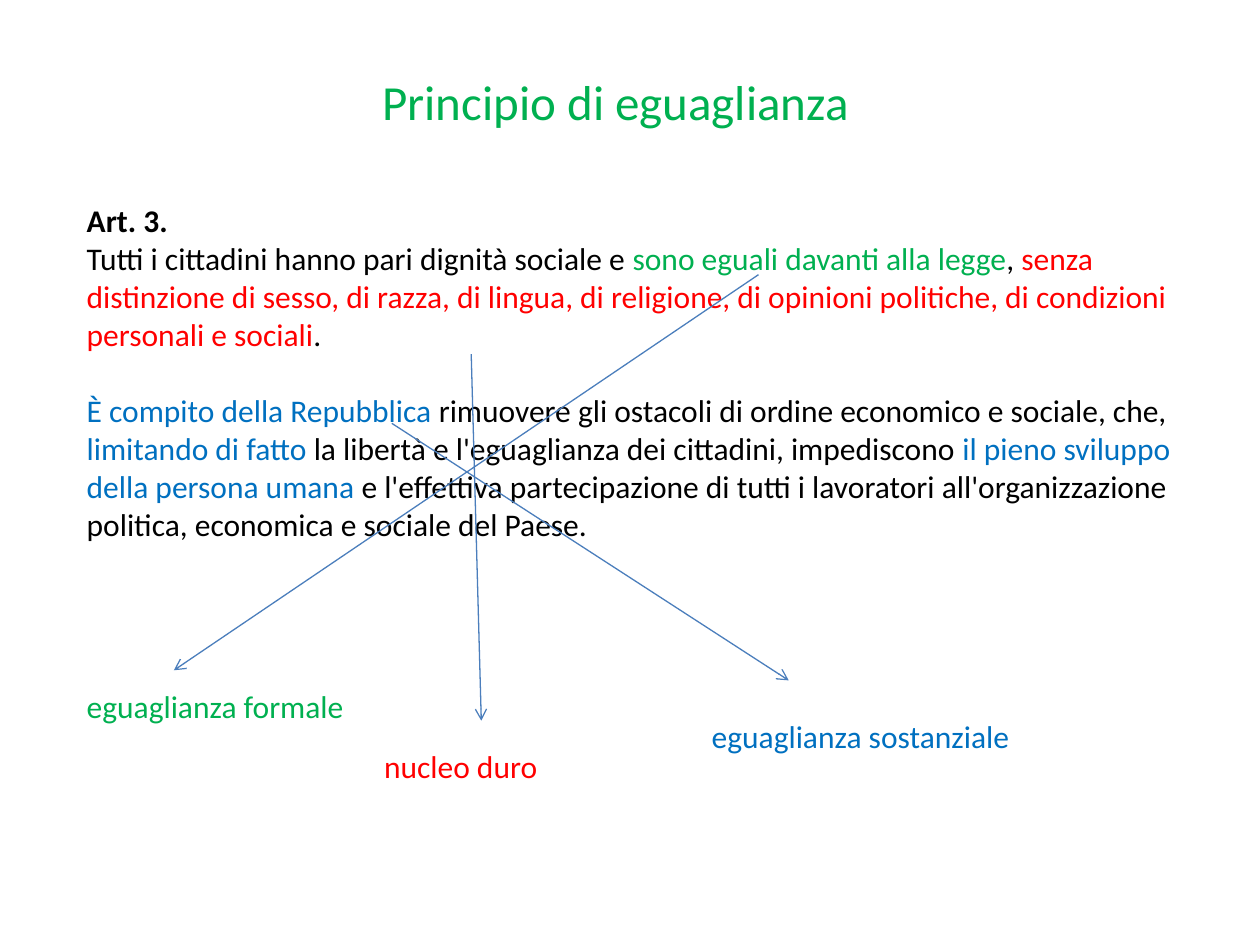
from dataclasses import dataclass

from lxml.etree import SubElement
from pptx import Presentation
from pptx.dml.color import RGBColor
from pptx.enum.shapes import MSO_CONNECTOR as Connector
from pptx.enum.text import MSO_AUTO_SIZE as AutoSize, PP_ALIGN as Align
from pptx.oxml.ns import qn
from pptx.util import Inches, Pt


@dataclass(frozen=True)
class Theme:
    font: str = "Calibri"
    title_size: int = 28
    body_size: int = 18
    paragraph_gap: int = 22
    line_width: float = 0.75
    text: str = "000000"
    formal: str = "00B050"
    core: str = "FF0000"
    substantive: str = "0070C0"
    arrow: str = "4B7EBC"


THEME = Theme()

ARTICLE_HEADING = [("Art. 3.", THEME.text)]
FIRST_CLAUSE = [
    ("Tutti i cittadini hanno pari dignità sociale e ", THEME.text),
    ("sono eguali davanti alla legge", THEME.formal),
    (", ", THEME.text),
    ("senza distinzione di sesso, di razza, di lingua, di religione, "
     "di opinioni politiche, di condizioni personali e sociali", THEME.core),
    (".", THEME.text),
]
SECOND_CLAUSE = [
    ("È compito della Repubblica ", THEME.substantive),
    ("rimuovere gli ostacoli di ordine economico e sociale, che, ", THEME.text),
    ("limitando di fatto ", THEME.substantive),
    ("la libertà e l'eguaglianza dei cittadini, impediscono ", THEME.text),
    ("il pieno sviluppo della persona umana ", THEME.substantive),
    ("e l'effettiva partecipazione di tutti i lavoratori "
     "all'organizzazione politica, economica e sociale del Paese.", THEME.text),
]

CONCEPTS = [
    ("eguaglianza formale", THEME.formal, (0.59, 5.4, 2.36, 0.71),
     (6.02, 2.18), (1.38, 5.32)),
    ("nucleo duro", THEME.core, (2.95, 5.88, 1.65, 0.4),
     (3.74, 2.81), (3.82, 5.72)),
    ("eguaglianza sostanziale", THEME.substantive, (5.55, 5.64, 3.15, 0.4),
     (3.11, 3.36), (6.26, 5.4)),
]


def add_text_frame(slide, box):
    text_frame = slide.shapes.add_textbox(*map(Inches, box)).text_frame
    text_frame.word_wrap = True
    text_frame.auto_size = AutoSize.SHAPE_TO_FIT_TEXT
    return text_frame


def write_text(paragraph, pieces, size=THEME.body_size, bold=False,
               align=Align.LEFT, space_before=0):
    paragraph.alignment = align
    paragraph.space_before = Pt(space_before)
    for text, color in pieces:
        run = paragraph.add_run()
        run.text = text
        run.font.name = THEME.font
        run.font.size = Pt(size)
        run.font.bold = bold
        run.font.color.rgb = RGBColor.from_string(color)


def add_title(slide, box):
    write_text(add_text_frame(slide, box).paragraphs[0],
               [("Principio di eguaglianza", THEME.formal)],
               size=THEME.title_size, align=Align.CENTER)


def add_article(slide, box):
    text_frame = add_text_frame(slide, box)
    write_text(text_frame.paragraphs[0], ARTICLE_HEADING, bold=True)
    write_text(text_frame.add_paragraph(), FIRST_CLAUSE)
    write_text(text_frame.add_paragraph(), SECOND_CLAUSE,
               space_before=THEME.paragraph_gap)


def add_arrow(slide, start, end):
    connector = slide.shapes.add_connector(
        Connector.STRAIGHT, *map(Inches, (*start, *end)))
    connector.line.color.rgb = RGBColor.from_string(THEME.arrow)
    connector.line.width = Pt(THEME.line_width)
    SubElement(connector.line._get_or_add_ln(), qn("a:tailEnd"), type="arrow")
    SubElement(connector._element.spPr, qn("a:effectLst"))


def add_concept(slide, label, color, box, start, end):
    add_arrow(slide, start, end)
    write_text(add_text_frame(slide, box).paragraphs[0], [(label, color)])


def main():
    presentation = Presentation()
    presentation.slide_width = Inches(10)
    presentation.slide_height = Inches(7.5)
    slide = presentation.slides.add_slide(presentation.slide_layouts[6])
    add_title(slide, (0.75, 0.52, 8.27, 0.57))
    add_article(slide, (0.59, 1.55, 8.9, 3.13))
    for concept in CONCEPTS:
        add_concept(slide, *concept)
    presentation.save("out.pptx")


if __name__ == "__main__":
    main()
